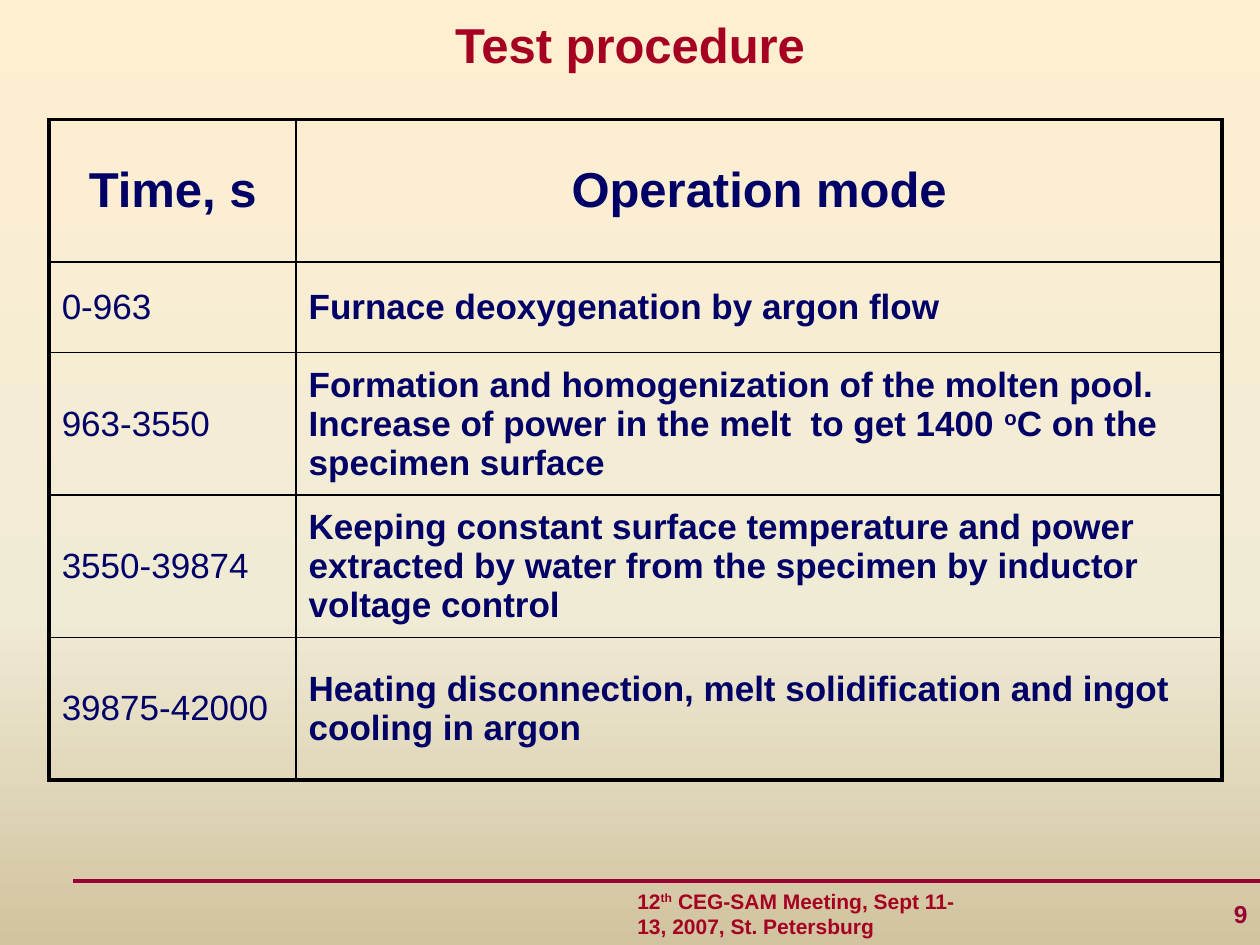
"""Build the test procedure slide with its table of operation modes."""
from copy import deepcopy
from dataclasses import dataclass

from lxml import etree
from pptx import Presentation
from pptx.dml.color import RGBColor
from pptx.enum.shapes import MSO_CONNECTOR
from pptx.enum.text import MSO_ANCHOR, PP_ALIGN
from pptx.oxml import parse_xml
from pptx.oxml.ns import nsdecls, qn
from pptx.util import Inches, Pt

LEFT, CENTER, RIGHT = PP_ALIGN.LEFT, PP_ALIGN.CENTER, PP_ALIGN.RIGHT
MIDDLE = MSO_ANCHOR.MIDDLE
STRAIGHT = MSO_CONNECTOR.STRAIGHT


@dataclass(frozen=True)
class Theme:
    font: str = "Arial"
    heading: str = "A50021"
    accent: str = "990033"
    body: str = "000066"
    border: str = "000000"
    background: tuple = ((0, "FFEFD1"), (0.65, "F0EBD5"), (1, "D1C39F"))
    title_size: int = 28
    body_size: int = 20
    number_size: int = 14
    footer_size: int = 12
    thick: float = 2.25
    thin: float = 1


theme = Theme()


def write(text_frame, parts, size, color, bold=True, alignment=LEFT):
    """Write text parts, raising every second one as a superscript."""
    paragraph = text_frame.paragraphs[0]
    paragraph.alignment = alignment
    for index, part in enumerate(parts):
        run = paragraph.add_run()
        run.text = part
        run.font.name = theme.font
        run.font.size = Pt(size)
        run.font.bold = bold
        run.font.color.rgb = RGBColor.from_string(color)
        if index % 2:
            run._r.get_or_add_rPr().set("baseline", "30000")


def add_border(cell, side, width):
    """Give one side of a cell a solid line."""
    cell._tc.get_or_add_tcPr().append(parse_xml(
        f'<a:ln{side} {nsdecls("a")} w="{Pt(width)}"><a:solidFill>'
        f'<a:srgbClr val="{theme.border}"/></a:solidFill></a:ln{side}>'))


presentation = Presentation()
presentation.slide_width = Inches(10)
presentation.slide_height = Inches(7.5)
slide = presentation.slides.add_slide(presentation.slide_layouts[6])

background = slide.background.fill
background.gradient()
background.gradient_angle = 270
stop_list = slide.element.xpath(".//a:gsLst")[0]
stop_list.append(deepcopy(stop_list[-1]))
for stop, (position, color) in zip(background.gradient_stops, theme.background):
    stop.position = position
    stop.color.rgb = RGBColor.from_string(color)

footer_line = slide.shapes.add_connector(
    STRAIGHT, Inches(0.58), Inches(6.99), Inches(10), Inches(6.99))
footer_line.line.color.rgb = RGBColor.from_string(theme.accent)
footer_line.line.width = Pt(theme.thick)
etree.SubElement(footer_line._element.spPr, qn("a:effectLst"))

footer = ["12", "th", " CEG-SAM Meeting, Sept 11-13, 2007, St. Petersburg"]
text_boxes = [
    (4.96, 7, 2.82, 0.5, footer, theme.footer_size, theme.heading, LEFT, False),
    (7.92, 7, 2.08, 0.5, ["9"], theme.number_size, theme.accent, RIGHT, False),
    (0, 0, 10, 0.7, ["Test procedure"], theme.title_size, theme.heading, CENTER, True),
]
for left, top, width, height, parts, size, color, alignment, wrap in text_boxes:
    text_box = slide.shapes.add_textbox(
        Inches(left), Inches(top), Inches(width), Inches(height))
    text_box.text_frame.word_wrap = wrap
    text_box.text_frame.vertical_anchor = MIDDLE
    write(text_box.text_frame, parts, size, color, alignment=alignment)

rows = [
    ("Time, s", ["Operation mode"]),
    ("0-963", ["Furnace deoxygenation by argon flow"]),
    ("963-3550", ["Formation and homogenization of the molten pool. Increase of "
                  "power in the melt  to get 1400 ", "o", "C on the specimen surface"]),
    ("3550-39874", ["Keeping constant surface temperature and power extracted by "
                    "water from the specimen by inductor voltage control"]),
    ("39875-42000", ["Heating disconnection, melt solidification and ingot "
                     "cooling in argon"]),
]
last_row = len(rows) - 1
table = slide.shapes.add_table(
    len(rows), 2, Inches(0.39), Inches(0.95), Inches(9.31), Inches(5.24)).table
table.first_row = False
table.horz_banding = False
for column, width in zip(table.columns, (1.96, 7.35)):
    column.width = Inches(width)
for row, height in zip(table.rows, (1.13, 0.72, 1.13, 1.13, 1.13)):
    row.height = Inches(height)

for row_index, (time, mode) in enumerate(rows):
    header = row_index == 0
    for column_index, parts in enumerate(([time], mode)):
        cell = table.cell(row_index, column_index)
        cell.vertical_anchor = MIDDLE
        cell.margin_left = cell.margin_right = Inches(0.1)
        cell.margin_top = cell.margin_bottom = Inches(0.05)
        outer_sides = {"L": column_index == 0, "R": column_index == 1,
                       "T": header, "B": row_index == last_row}
        for side, outer in outer_sides.items():
            add_border(cell, side, theme.thick if outer else theme.thin)
        cell.fill.background()
        write(cell.text_frame, parts,
              theme.title_size if header else theme.body_size, theme.body,
              bold=header or column_index == 1,
              alignment=CENTER if header else LEFT)

presentation.save("out.pptx")
